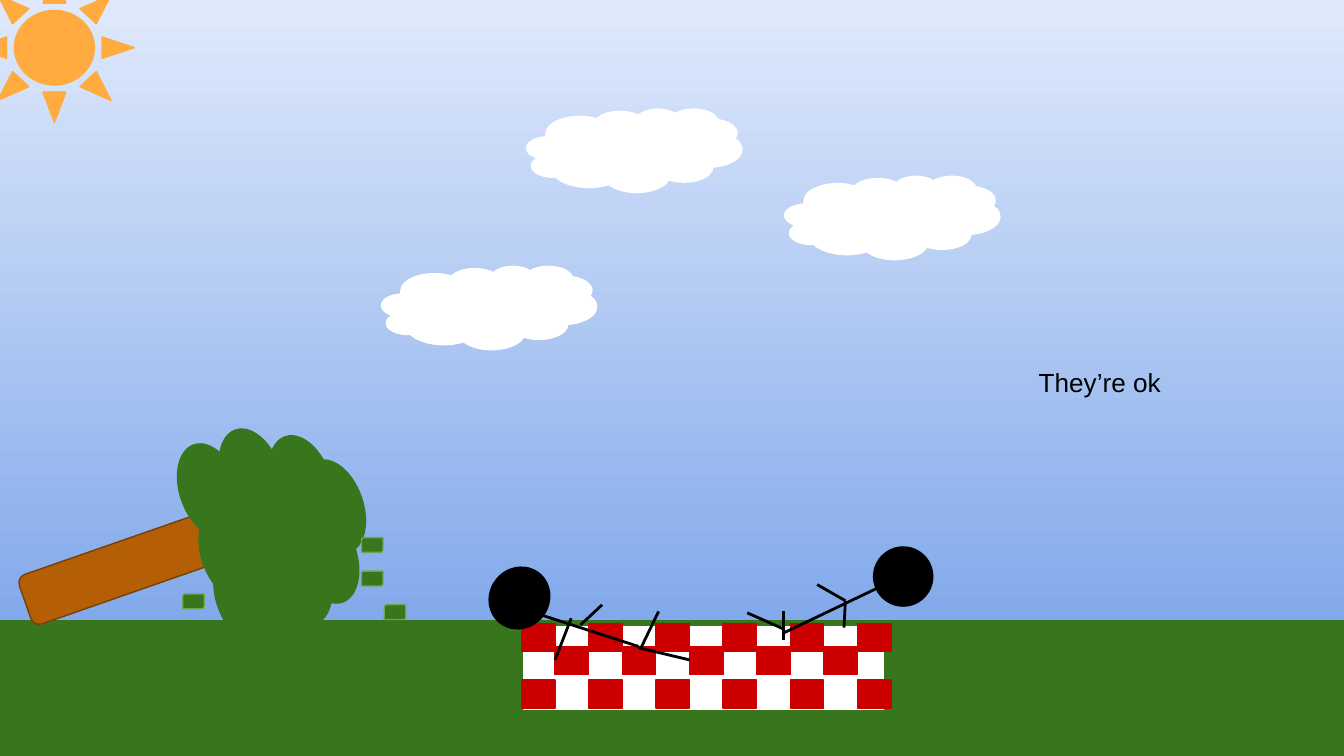
from pptx import Presentation
from pptx.dml.color import RGBColor
from pptx.enum.shapes import MSO_CONNECTOR, MSO_SHAPE
from pptx.enum.text import MSO_AUTO_SIZE
from pptx.oxml.ns import qn
from pptx.util import Inches, Pt
from lxml import etree

RECTANGLE = MSO_SHAPE.RECTANGLE
ROUNDED = MSO_SHAPE.ROUNDED_RECTANGLE
OVAL = MSO_SHAPE.OVAL
FACE = MSO_SHAPE.SMILEY_FACE
CLOUD = MSO_SHAPE.CLOUD
SUN = MSO_SHAPE.SUN
LEAF = MSO_SHAPE.ROUND_2_DIAG_RECTANGLE
STRAIGHT = MSO_CONNECTOR.STRAIGHT
FIT_SHAPE = MSO_AUTO_SIZE.SHAPE_TO_FIT_TEXT

SKY_TOP = RGBColor(0xDF, 0xE9, 0xFB)
SKY_BOTTOM = RGBColor(0x6E, 0x9B, 0xE7)
GREEN = RGBColor(0x38, 0x76, 0x1D)
LIGHT_GREEN = RGBColor(0x6A, 0xA8, 0x4F)
BROWN = RGBColor(0xB4, 0x5F, 0x06)
DARK_BROWN = RGBColor(0x78, 0x3F, 0x04)
RED = RGBColor(0xCC, 0x00, 0x00)
WHITE = RGBColor(0xFF, 0xFF, 0xFF)
BLACK = RGBColor(0x00, 0x00, 0x00)
ORANGE = RGBColor(0xFF, 0xAB, 0x40)

TREE_TILT = 70.8
FOLIAGE = [(1.2, 3.43), (1.36, 3.9), (1.59, 3.56), (1.73, 3.95),
           (1.51, 3.32), (1.63, 4.16), (1.87, 4.08), (1.81, 3.66),
           (2.07, 3.92), (1.88, 3.37), (1.47, 4.22), (2.12, 3.55)]
LEAVES = [(2.69, 4.25), (1.36, 4.42), (2.69, 4), (2.86, 4.5)]
CLOUDS = [(3.92, 0.81), (5.84, 1.31), (2.84, 1.98)]

# Each limb runs from (x1, y1) to (x2, y2)
RIGHT_LIMBS = [(6.52, 4.38, 5.83, 4.71), (5.83, 4.68, 5.56, 4.56),
               (5.83, 4.55, 5.83, 4.76), (6.28, 4.67, 6.29, 4.47),
               (6.29, 4.47, 6.08, 4.35)]
LEFT_LIMBS = [(4.04, 4.58, 4.75, 4.81), (4.25, 4.6, 4.13, 4.91),
              (4.32, 4.65, 4.48, 4.5), (4.75, 4.82, 5.13, 4.91),
              (4.77, 4.82, 4.9, 4.55)]


def paint_sky(slide):
    fill = slide.background.fill
    fill.gradient()
    fill.gradient_angle = 270
    for stop, position, color in zip(fill.gradient_stops, (0, 1),
                                     (SKY_TOP, SKY_BOTTOM)):
        stop.position = position
        stop.color.rgb = color


def add_shape(slide, kind, left, top, width, height, color,
              line_color=None, rotation=0):
    shape = slide.shapes.add_shape(kind, Inches(left), Inches(top),
                                   Inches(width), Inches(height))
    shape.shadow.inherit = False
    shape.fill.solid()
    shape.fill.fore_color.rgb = color
    shape.line.color.rgb = line_color or color
    shape.line.width = Pt(0.75)
    shape.rotation = rotation
    return shape


def add_limb(slide, x1, y1, x2, y2):
    limb = slide.shapes.add_connector(STRAIGHT, Inches(x1), Inches(y1),
                                      Inches(x2), Inches(y2))
    limb.line.color.rgb = BLACK
    limb.line.width = Pt(1.5)
    etree.SubElement(limb._element.spPr, qn("a:effectLst"))


def add_tree(slide):
    add_shape(slide, ROUNDED, 0.78, 3.37, 0.39, 1.67, BROWN, DARK_BROWN,
              TREE_TILT)
    for left, top in FOLIAGE:
        add_shape(slide, OVAL, left, top, 0.72, 0.44, GREEN,
                  rotation=TREE_TILT)


def add_blanket(slide):
    add_shape(slide, RECTANGLE, 3.9, 4.66, 2.67, 0.62, WHITE)
    for column in range(11):
        tops = (4.81,) if column % 2 else (4.64, 5.06)
        for top in tops:
            add_shape(slide, RECTANGLE, 3.88 + 0.25 * column, top,
                      0.25, 0.21, RED)


def add_person(slide, left, top, width, rotation, limbs, flipped=False):
    head = add_shape(slide, FACE, left, top, width, 0.44, BLACK,
                     rotation=rotation)
    if flipped:
        head._element.spPr.find(qn("a:xfrm")).set("flipH", "1")
    for limb in limbs:
        add_limb(slide, *limb)


def add_caption(slide, text):
    box = slide.shapes.add_textbox(Inches(7.63), Inches(2.63),
                                   Inches(1.7), Inches(0.44))
    frame = box.text_frame
    frame.word_wrap = True
    frame.auto_size = FIT_SHAPE
    frame.margin_left = frame.margin_right = Inches(0.1)
    frame.margin_top = frame.margin_bottom = Inches(0.1)
    paragraph = frame.paragraphs[0]
    paragraph.text = text
    paragraph.font.name = "Arial"
    paragraph.font.size = Pt(14)
    paragraph.font.color.rgb = BLACK


def main():
    # Widescreen slide, 16 to 9
    presentation = Presentation()
    presentation.slide_width = Inches(10)
    presentation.slide_height = Inches(10 * 9 / 16)
    slide = presentation.slides.add_slide(presentation.slide_layouts[6])

    # Sky, ground and fallen tree
    paint_sky(slide)
    add_shape(slide, RECTANGLE, 0, 4.62, 10, 1, GREEN)
    add_tree(slide)

    # Picnic
    add_blanket(slide)
    add_person(slide, 6.5, 4.07, 0.44, 65.6, RIGHT_LIMBS)
    add_person(slide, 3.63, 4.23, 0.47, 307, LEFT_LIMBS, flipped=True)

    # Clouds, sun and loose leaves
    for left, top in CLOUDS:
        add_shape(slide, CLOUD, left, top, 1.6, 0.62, WHITE)
    add_shape(slide, SUN, -0.19, -0.2, 1.19, 1.11, ORANGE)
    for left, top in LEAVES:
        add_shape(slide, LEAF, left, top, 0.16, 0.11, GREEN, LIGHT_GREEN)

    add_caption(slide, "They’re ok")
    presentation.save("out.pptx")


if __name__ == "__main__":
    main()
